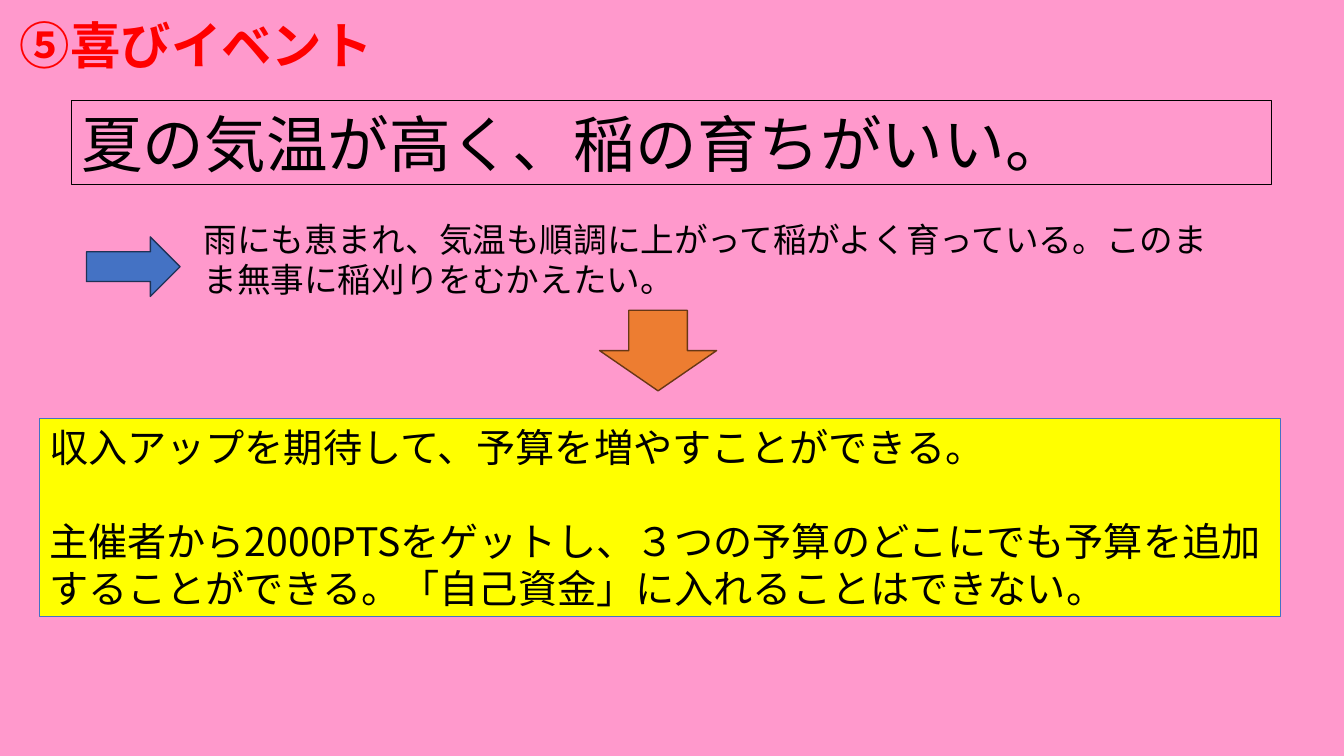
from pptx import Presentation
from pptx.dml.color import RGBColor
from pptx.enum.shapes import MSO_SHAPE
from pptx.enum.text import MSO_ANCHOR, PP_ALIGN
from pptx.oxml.ns import qn
from pptx.util import Cm, Pt

RECT, RIGHT, DOWN = MSO_SHAPE.RECTANGLE, MSO_SHAPE.RIGHT_ARROW, MSO_SHAPE.DOWN_ARROW
LEFT, CENTER, TOP = PP_ALIGN.LEFT, PP_ALIGN.CENTER, MSO_ANCHOR.TOP

FONT = "Noto Sans CJK JP"
LINE_HEIGHT = 1.2
COLORS = {
    "background": "FF99CC", "text": "000000", "title": "FF0000",
    "blue": "4472C4", "blue_edge": "1E3256",
    "orange": "ED7D31", "orange_edge": "683715", "yellow": "FFFF00",
}

TITLE = ["⑤喜びイベント"]
EVENT = ["夏の気温が高く、稲の育ちがいい。"]
DETAIL = ["雨にも恵まれ、気温も順調に上がって稲がよく育っている。このまま無事に稲刈りをむかえたい。"]
EFFECT = [
    "収入アップを期待して、予算を増やすことができる。",
    "主催者から2000PTSをゲットし、３つの予算のどこにでも予算を追加することができる。「自己資金」に入れることはできない。",
]

# Left, top, width, height in centimetres
TITLE_BOX = (0.2, 0.23, 9.5, 1.8)
EVENT_BOX = (1.8, 2.54, 30.25, 2.11)
DETAIL_BOX = (4.88, 5.38, 26.09, 2.34)
EFFECT_BOX = (0.99, 10.54, 31.29, 5.0)
DETAIL_ARROW = (2.18, 5.97, 2.36, 1.5)
EFFECT_ARROW = (15.11, 7.82, 2.95, 2.03)


def rgb(name):
    return RGBColor.from_string(COLORS[name])


def add_shape(s, kind, box, line, fill=None, width=1):
    sp = s.shapes.add_shape(kind, *map(Cm, box))
    sp.shadow.inherit = False
    if fill:
        sp.fill.solid()
        sp.fill.fore_color.rgb = rgb(fill)
    else:
        sp.fill.background()
    sp.line.color.rgb = rgb(line)
    sp.line.width = Pt(width)
    return sp


def add_textbox(s, box):
    return s.shapes.add_textbox(*map(Cm, box))


def write(sp, lines, size, color="text", bold=False, align=LEFT, wrap=True):
    """Fill sp with paragraphs set one line height apart."""
    tf = sp.text_frame
    tf.word_wrap = wrap
    tf.vertical_anchor = TOP
    for i, text in enumerate(lines):
        p = tf.add_paragraph() if i else tf.paragraphs[0]
        p.alignment = align
        p.line_spacing = Pt(size * LINE_HEIGHT)
        if i:
            p.space_before = Pt(size * LINE_HEIGHT)
        r = p.add_run()
        r.text = text
        r.font.name = FONT
        r.font.size = Pt(size)
        r.font.bold = bold
        r.font.color.rgb = rgb(color)
        ea = r.font._element.makeelement(qn("a:ea"), {"typeface": FONT})
        r.font._element.find(qn("a:latin")).addnext(ea)


def main():
    prs = Presentation()
    prs.slide_width, prs.slide_height = Cm(33.87), Cm(19.05)
    s = prs.slides.add_slide(prs.slide_layouts[6])
    s.background.fill.solid()
    s.background.fill.fore_color.rgb = rgb("background")

    write(add_shape(s, RECT, EVENT_BOX, "text"), EVENT, 44)
    write(add_textbox(s, DETAIL_BOX), DETAIL, 24)
    add_shape(s, RIGHT, DETAIL_ARROW, "blue_edge", "blue")
    add_shape(s, DOWN, EFFECT_ARROW, "orange_edge", "orange")
    write(add_shape(s, RECT, EFFECT_BOX, "blue", "yellow", 0.5), EFFECT, 28)
    write(add_textbox(s, TITLE_BOX), TITLE, 36, "title", bold=True, align=CENTER, wrap=False)

    prs.save("out.pptx")


if __name__ == "__main__":
    main()
